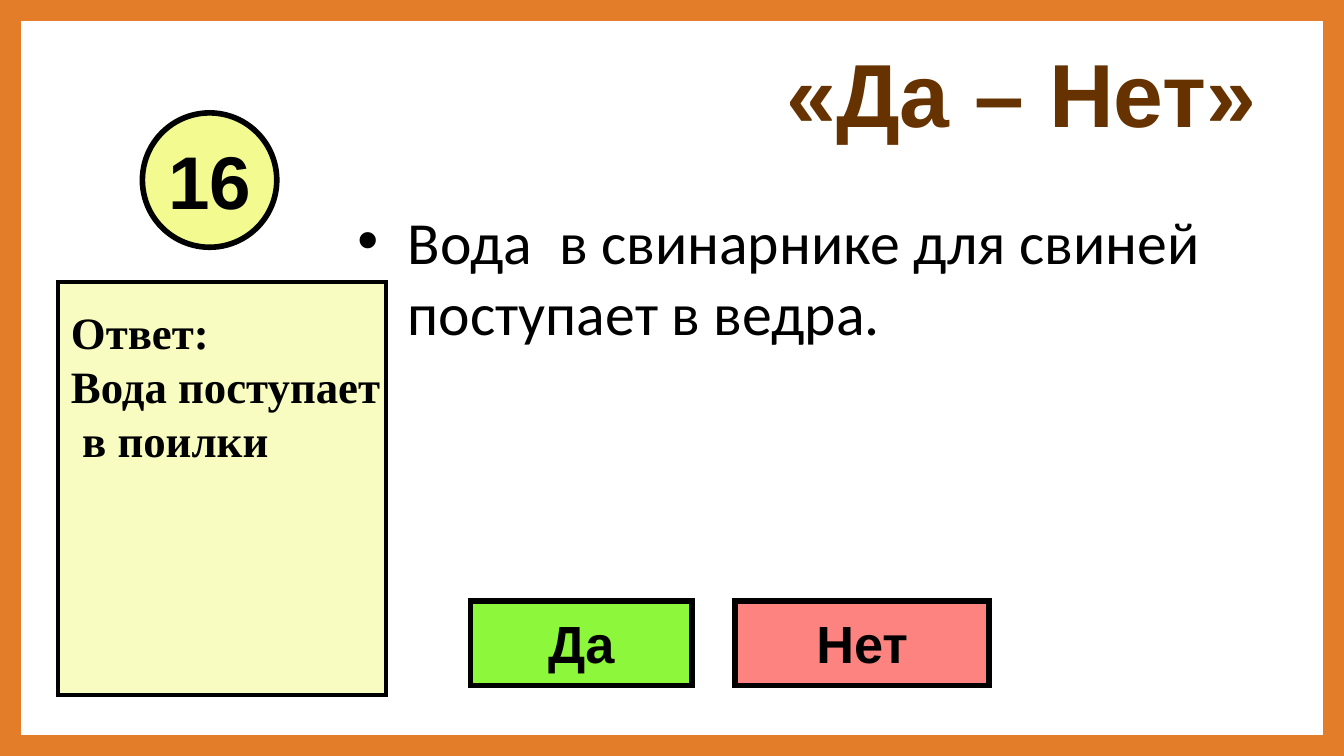
import lxml.etree
import pptx
import pptx.util
import pptx.dml.color
import pptx.enum.shapes
import pptx.enum.text
import pptx.oxml.ns

Inches = pptx.util.Inches
Pt = pptx.util.Pt
RGBColor = pptx.dml.color.RGBColor
SHAPE = pptx.enum.shapes.MSO_SHAPE
ANCHOR = pptx.enum.text.MSO_ANCHOR
ALIGN = pptx.enum.text.PP_ALIGN

ORANGE = RGBColor(0xE3, 0x7D, 0x29)
BROWN = RGBColor(0x66, 0x33, 0x00)
BLACK = RGBColor(0, 0, 0)
WHITE = RGBColor(0xFF, 0xFF, 0xFF)
GREEN = RGBColor(0x8C, 0xF7, 0x3B)
RED = RGBColor(0xFC, 0x83, 0x80)
CREAM = RGBColor(0xF8, 0xFC, 0xC0)
YELLOW = RGBColor(0xF2, 0xFA, 0x90)


def write(box, text, size, font="Arial", color=BLACK, bold=True,
          align=ALIGN.CENTER, anchor=ANCHOR.MIDDLE, wrap=True, spacing=None):
    """Fill a box with text, one paragraph per line."""
    frame = box.text_frame
    frame.text = text
    frame.word_wrap = wrap
    frame.auto_size = pptx.enum.text.MSO_AUTO_SIZE.NONE
    frame.vertical_anchor = anchor
    for para in frame.paragraphs:
        para.alignment = align
        para.space_before = Pt(0)
        para.line_spacing = spacing
        for span in para.runs:
            span.font.name = font
            span.font.size = Pt(size)
            span.font.bold = bold
            span.font.color.rgb = color


def add_box(page, kind, left, top, width, height, fill, line=BLACK, weight=3):
    """Add a filled shape with a square-cornered outline."""
    box = page.shapes.add_shape(kind, Inches(left), Inches(top), Inches(width), Inches(height))
    box.shadow.inherit = False
    box.fill.solid()
    box.fill.fore_color.rgb = fill
    box.line.color.rgb = line
    box.line.width = Pt(weight)
    outline = box._element.spPr.find(pptx.oxml.ns.qn("a:ln"))
    lxml.etree.SubElement(outline, pptx.oxml.ns.qn("a:miter"), lim="800000")
    return box


deck = pptx.Presentation()
deck.slide_width = Inches(10)
deck.slide_height = deck.slide_width * 9 // 16
page = deck.slides.add_slide(deck.slide_layouts[1])

# Border, behind everything else
border = add_box(page, SHAPE.FRAME, 0, 0, 10, deck.slide_height.inches, ORANGE, ORANGE, 2)
border.adjustments[0] = 0.025
page.shapes._spTree.insert(2, border._element)

# Title and statement
title = page.shapes.title
body = page.placeholders[1]
for holder, (left, top, width, height) in ((title, (5.47, 0.21, 4.26, 0.94)),
                                           (body, (2.56, 1.47, 7.03, 3.71))):
    holder.left, holder.top = Inches(left), Inches(top)
    holder.width, holder.height = Inches(width), Inches(height)
    holder.fill.solid()
    holder.fill.fore_color.rgb = WHITE
write(title, "«Да – Нет»", 48, color=BROWN)
write(body, "Вода  в свинарнике для свиней поступает в ведра.", 32, font="Calibri",
      bold=False, align=ALIGN.LEFT, anchor=ANCHOR.TOP)

# Answer buttons
for label, left, width, fill in (("Да", 3.5, 1.65, GREEN), ("Нет", 5.47, 1.89, RED)):
    button = add_box(page, SHAPE.RECTANGLE, left, 4.47, width, 0.63, fill)
    write(button, label, 28, wrap=False)

# Answer card
card = add_box(page, SHAPE.RECTANGLE, 0.43, 2.1, 2.44, 3.07, CREAM, weight=2.25)
write(card, "Ответ:\nВода поступает\n в поилки", 24, font="Times New Roman",
      align=ALIGN.LEFT, anchor=ANCHOR.TOP, spacing=Pt(28.8))
card.text_frame.margin_top = Inches(0.17)
card.text_frame.margin_right = 0

# Question number
number = add_box(page, SHAPE.OVAL, 1.06, 0.84, 1, 1, YELLOW)
write(number, "16", 40, wrap=False)

deck.save("out.pptx")
